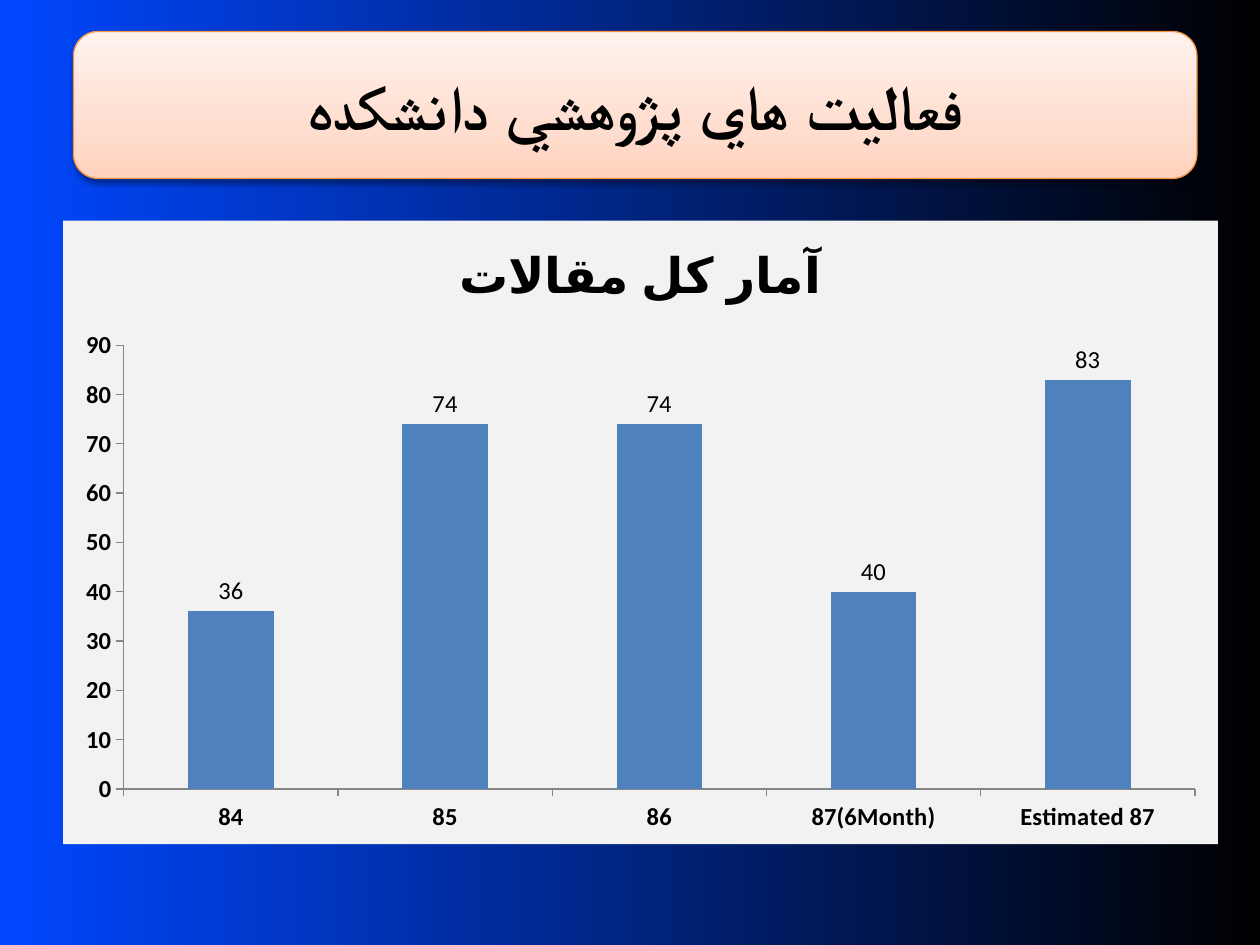
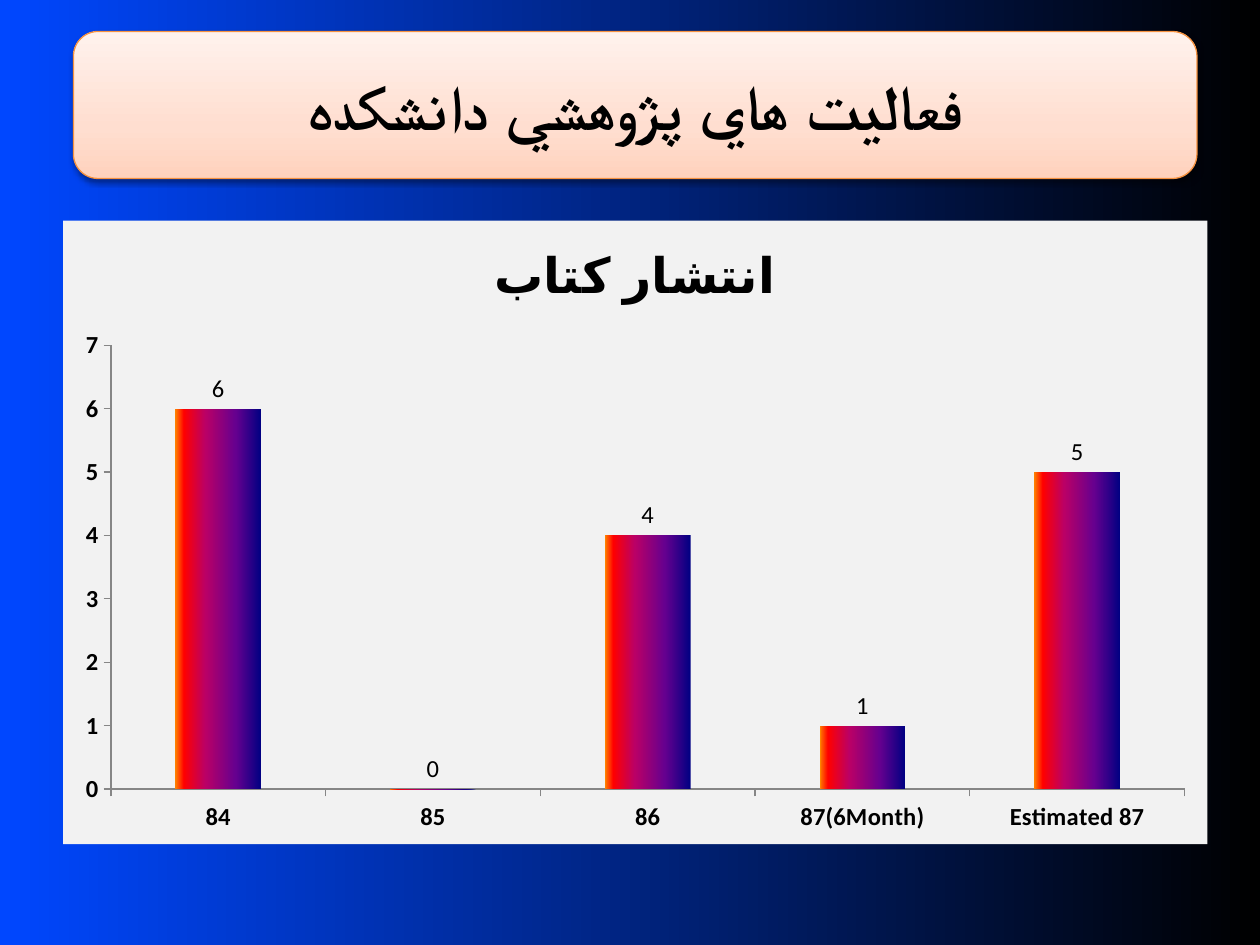
from dataclasses import dataclass

from lxml import etree
from pptx import Presentation
from pptx.chart.data import CategoryChartData
from pptx.dml.color import RGBColor
from pptx.enum.chart import XL_CHART_TYPE, XL_LABEL_POSITION, XL_TICK_MARK
from pptx.enum.shapes import MSO_SHAPE
from pptx.enum.text import MSO_ANCHOR, PP_ALIGN
from pptx.oxml import parse_xml
from pptx.oxml.ns import nsdecls, qn
from pptx.util import Pt

# Content
HEADING = "فعاليت هاي پژوهشي دانشكده"
YEARS = ["84", "85", "86", "87(6Month)", "Estimated 87"]
CHARTS = [
    {"title": "آمار كل مقالات", "values": [36, 74, 74, 40, 83],
     "top": 90, "step": 10, "width": 660, "bars": "plain"},
    {"title": "انتشار كتاب", "values": [6, 0, 4, 1, 5],
     "top": 7, "step": 1, "width": 654, "bars": "sunset"},
]


@dataclass(frozen=True)
class Theme:
    font: str = "Calibri"
    heading_size: int = 36
    title_size: int = 28
    label_size: int = 14
    base_size: int = 10
    text: str = "000000"
    banner_line: str = "F69240"
    panel: str = "F2F2F2"
    axis: str = "868686"
    bar: str = "4F81BD"
    # Gradients: angle in degrees, then (position, colour) stops
    backdrop: tuple = (180, ((0, "000000"), (100, "0047FF")))
    banner: tuple = (270, ((0, "FFD2BD"), (35, "FFDED0"), (100, "FFF2ED")))
    sunset: tuple = (180, ((0, "000082"), (30, "66008F"), (65, "BA0066"),
                           (90, "FF0000"), (100, "FF8200")))


THEME = Theme()


def rgb(code):
    return RGBColor.from_string(code)


def set_gradient(fill, holder, gradient):
    """Give the fill kept in the holder element a linear gradient."""
    angle, stops = gradient
    fill.solid()
    marks = "".join(f'<a:gs pos="{at * 1000}"><a:srgbClr val="{code}"/></a:gs>'
                    for at, code in stops)
    holder.replace(holder.find(qn("a:solidFill")), parse_xml(
        f'<a:gradFill {nsdecls("a")} rotWithShape="1"><a:gsLst>{marks}</a:gsLst>'
        f'<a:lin ang="{angle * 60000}" scaled="0"/></a:gradFill>'))


def style_font(font, size, bold=False):
    font.name = THEME.font
    font.size = Pt(size)
    font.bold = bold
    font.color.rgb = rgb(THEME.text)


def add_backdrop(page):
    fill = page.background.fill
    fill.solid()
    holder = page.element.find(".//" + qn("p:bgPr"))
    set_gradient(fill, holder, THEME.backdrop)


def add_banner(page):
    box = page.shapes.add_shape(MSO_SHAPE.ROUNDED_RECTANGLE,
                                Pt(42), Pt(18), Pt(642), Pt(84))
    properties = box.element.spPr
    set_gradient(box.fill, properties, THEME.banner)
    box.line.color.rgb = rgb(THEME.banner_line)
    box.line.width = Pt(0.75)

    # Soft shadow below the banner
    box.shadow.inherit = False
    shadow = etree.SubElement(properties.find(qn("a:effectLst")), qn("a:outerShdw"),
                              blurRad=str(Pt(3.1)), dist=str(Pt(1.6)),
                              dir=str(90 * 60000), rotWithShape="0")
    colour = etree.SubElement(shadow, qn("a:srgbClr"), val="000000")
    etree.SubElement(colour, qn("a:alpha"), val="38000")

    box.text_frame.text = HEADING
    box.text_frame.vertical_anchor = MSO_ANCHOR.MIDDLE
    para = box.text_frame.paragraphs[0]
    para.alignment = PP_ALIGN.CENTER
    style_font(para.runs[0].font, THEME.heading_size, bold=True)


def style_axis(axis):
    axis.has_major_gridlines = False
    axis.major_tick_mark = XL_TICK_MARK.OUTSIDE
    axis.minor_tick_mark = XL_TICK_MARK.NONE
    axis.format.line.color.rgb = rgb(THEME.axis)
    axis.format.line.width = Pt(0.75)
    style_font(axis.tick_labels.font, THEME.label_size, bold=True)


def add_column_chart(page, content):
    data = CategoryChartData(number_format="General")
    data.categories = YEARS
    data.add_series(content["title"], content["values"])
    chart = page.shapes.add_chart(XL_CHART_TYPE.COLUMN_CLUSTERED, Pt(36), Pt(126),
                                  Pt(content["width"]), Pt(356.4), data).chart
    style_font(chart.font, THEME.base_size)
    chart.has_legend = False

    # Panel behind the chart
    chart.element.find(qn("c:txPr")).addprevious(parse_xml(
        f'<c:spPr {nsdecls("c", "a")}><a:solidFill><a:srgbClr val="{THEME.panel}"/>'
        '</a:solidFill><a:ln><a:noFill/></a:ln></c:spPr>'))

    # Title
    chart.has_title = True
    chart.chart_title.include_in_layout = False
    title = chart.chart_title.text_frame
    title.text = content["title"]
    style_font(title.paragraphs[0].runs[0].font, THEME.title_size, bold=True)

    # Axes
    style_axis(chart.category_axis)
    style_axis(chart.value_axis)
    chart.value_axis.minimum_scale = 0
    chart.value_axis.maximum_scale = content["top"]
    chart.value_axis.major_unit = content["step"]

    # Bars and their values
    plot = chart.plots[0]
    plot.gap_width = 150
    plot.vary_by_categories = False
    series = plot.series[0]
    fill = series.format.fill
    fill.solid()
    fill.fore_color.rgb = rgb(THEME.bar)
    if content["bars"] == "sunset":
        set_gradient(fill, series.format.element.spPr if hasattr(series.format, "element")
                     else chart.element.find(".//" + qn("c:ser")).find(qn("c:spPr")),
                     THEME.sunset)
    labels = series.data_labels
    labels.show_value = True
    labels.position = XL_LABEL_POSITION.OUTSIDE_END
    style_font(labels.font, THEME.label_size)


def main():
    deck = Presentation()
    deck.slide_width, deck.slide_height = Pt(720), Pt(540)
    for content in CHARTS:
        page = deck.slides.add_slide(deck.slide_layouts[6])
        add_backdrop(page)
        add_banner(page)
        add_column_chart(page, content)
    deck.save("out.pptx")


if __name__ == "__main__":
    main()
